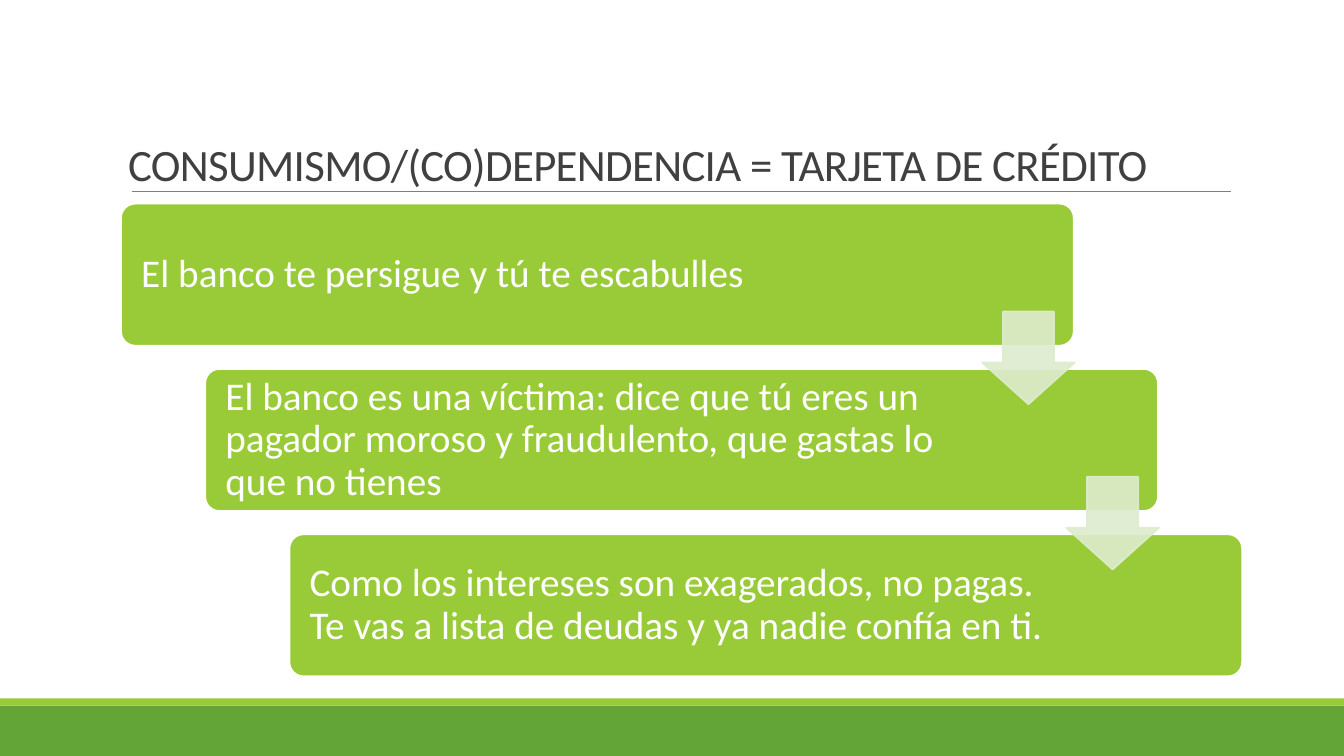
"""Build a slide with three cascading steps about credit card dependency."""
from dataclasses import dataclass

from lxml import etree
from pptx import Presentation
from pptx.dml.color import RGBColor
from pptx.enum.shapes import MSO_CONNECTOR, MSO_SHAPE
from pptx.enum.text import MSO_ANCHOR, MSO_AUTO_SIZE, PP_ALIGN
from pptx.oxml.ns import qn
from pptx.util import Inches, Pt

RECTANGLE = MSO_SHAPE.RECTANGLE
ROUNDED = MSO_SHAPE.ROUNDED_RECTANGLE
DOWN_ARROW = MSO_SHAPE.DOWN_ARROW
STRAIGHT = MSO_CONNECTOR.STRAIGHT
LEFT = PP_ALIGN.LEFT
MIDDLE, BOTTOM = MSO_ANCHOR.MIDDLE, MSO_ANCHOR.BOTTOM
NO_AUTOFIT = MSO_AUTO_SIZE.NONE

TITLE = "CONSUMISMO/(CO)DEPENDENCIA = TARJETA DE CRÉDITO"
STEPS = [
    "El banco te persigue y tú te escabulles",
    "El banco es una víctima: dice que tú eres un pagador moroso y fraudulento, que gastas lo que no tienes",
    "Como los intereses son exagerados, no pagas. Te vas a lista de deudas y ya nadie confía en ti.",
]


@dataclass(frozen=True)
class Theme:
    font: str = "Calibri"
    title_size: int = 32
    step_size: int = 28
    title: str = "404040"
    rule: str = "808080"
    dark_green: str = "63A537"
    green: str = "99CB38"
    pale_green: str = "DEECCE"
    white: str = "FFFFFF"


THEME = Theme()
WIDTH, HEIGHT = 13.33, 7.5
BAND_TOP, STRIPE_HEIGHT = 7.0, 0.07
RULE_LEFT, RULE_RIGHT, RULE_TOP = 1.31, 12.21, 1.9
TITLE_BOX = (1.17, 0.32, 11, 1.62)
CARD_LEFT, CARD_TOP, CARD_WIDTH, CARD_HEIGHT = 1.2, 2.02, 9.45, 1.41
STEP_RIGHT, STEP_DOWN = 0.835, 1.64
CARD_INSET_LEFT, CARD_INSET_RIGHT = 0.16, 1.9
ARROW_SIZE, ARROW_RIGHT, ARROW_DOWN = 0.92, 8.54, 1.07
ARROW_ALPHA = "90000"


def color(name):
    return RGBColor.from_string(name)


def place(shape, box):
    shape.left, shape.top, shape.width, shape.height = map(Inches, box)


def add_block(page, kind, box, fill, line=None):
    block = page.shapes.add_shape(kind, *map(Inches, box))
    block.shadow.inherit = False
    block.fill.solid()
    block.fill.fore_color.rgb = color(fill)
    if line:
        block.line.color.rgb = color(line)
        block.line.width = Pt(1.25)
    else:
        block.line.fill.background()
    return block


def write(shape, text, size, text_color, spacing, anchor):
    frame = shape.text_frame
    frame.word_wrap = True
    frame.auto_size = NO_AUTOFIT
    frame.vertical_anchor = anchor
    para = frame.paragraphs[0]
    para.text = text
    para.alignment = LEFT
    para.line_spacing = spacing
    para.font.name = THEME.font
    para.font.size = Pt(size)
    para.font.color.rgb = color(text_color)
    return frame


def add_background(page):
    add_block(page, RECTANGLE, (0, BAND_TOP, WIDTH, HEIGHT - BAND_TOP), THEME.dark_green)
    add_block(page, RECTANGLE, (0, BAND_TOP - STRIPE_HEIGHT, WIDTH, STRIPE_HEIGHT), THEME.green)
    ends = (RULE_LEFT, RULE_TOP, RULE_RIGHT, RULE_TOP)
    rule = page.shapes.add_connector(STRAIGHT, *map(Inches, ends))
    rule.line.color.rgb = color(THEME.rule)
    rule.line.width = Pt(0.5)
    etree.SubElement(rule._element.spPr, qn("a:effectLst"))


def add_title(page):
    title = page.shapes.title
    place(title, TITLE_BOX)
    frame = write(title, TITLE, THEME.title_size, THEME.title, 0.85, BOTTOM)
    span = frame.paragraphs[0].runs[0]
    span.font._element.set("spc", "-50")


def add_card(page, left, top, text):
    card = add_block(page, ROUNDED, (left, top, CARD_WIDTH, CARD_HEIGHT), THEME.green, THEME.white)
    card.adjustments[0] = 0.1
    frame = write(card, text, THEME.step_size, THEME.white, 0.9, MIDDLE)
    frame.margin_left = Inches(CARD_INSET_LEFT)
    frame.margin_right = Inches(CARD_INSET_RIGHT)


def add_arrow(page, left, top):
    box = (left + ARROW_RIGHT, top + ARROW_DOWN, ARROW_SIZE, ARROW_SIZE)
    arrow = add_block(page, DOWN_ARROW, box, THEME.pale_green, THEME.pale_green)
    arrow.adjustments[0] = 0.55
    arrow.adjustments[1] = 0.45
    for tint in arrow._element.spPr.iter(qn("a:srgbClr")):
        etree.SubElement(tint, qn("a:alpha")).set("val", ARROW_ALPHA)


def main():
    deck = Presentation()
    deck.slide_width, deck.slide_height = Inches(WIDTH), Inches(HEIGHT)
    page = deck.slides.add_slide(deck.slide_layouts[5])
    add_background(page)
    add_title(page)
    corners = [(CARD_LEFT + i * STEP_RIGHT, CARD_TOP + i * STEP_DOWN) for i in range(len(STEPS))]
    for corner, text in zip(corners, STEPS):
        add_card(page, *corner, text)
    for corner in corners[:-1]:
        add_arrow(page, *corner)
    deck.save("out.pptx")


if __name__ == "__main__":
    main()
